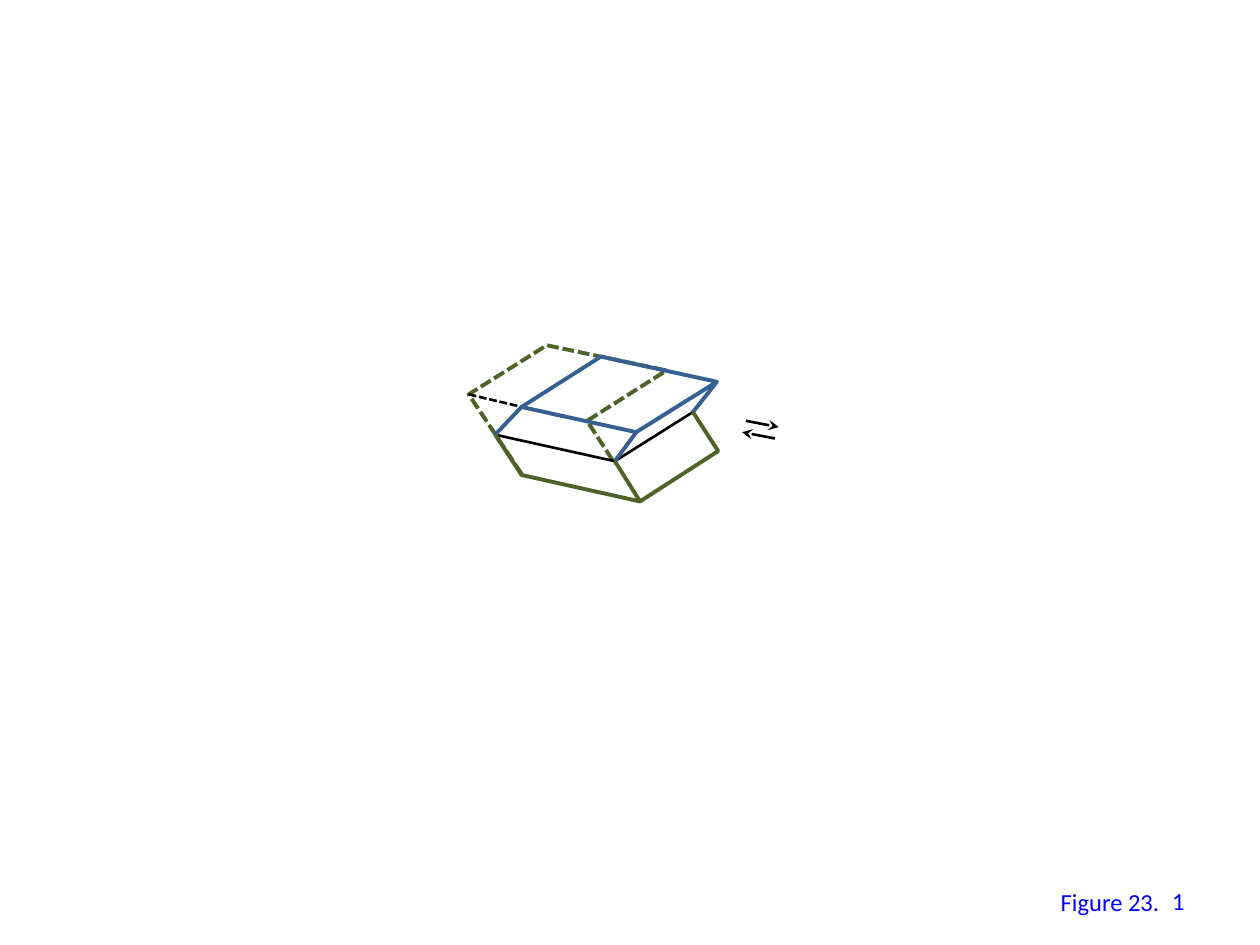
from pptx import Presentation
from pptx.dml.color import RGBColor
from pptx.enum.dml import MSO_LINE
from pptx.enum.shapes import MSO_CONNECTOR
from pptx.enum.text import MSO_ANCHOR, MSO_AUTO_SIZE, PP_ALIGN
from pptx.oxml.ns import qn
from pptx.util import Inches, Pt
from lxml.etree import SubElement

BLACK = RGBColor(0x00, 0x00, 0x00)
GREEN = RGBColor(0x4F, 0x62, 0x28)
BLUE = RGBColor(0x37, 0x60, 0x92)
LABEL_BLUE = RGBColor(0x00, 0x00, 0xFF)
THIN, THICK = 1.5, 2.25

# Corners of the two stacked prisms
MID_LEFT, MID_FRONT, MID_RIGHT = (3.93, 3.45), (4.88, 3.66), (5.5, 3.27)
TOP_LEFT, TOP_BACK, TOP_RIGHT, TOP_FRONT = (4.14, 3.23), (4.77, 2.83), (5.69, 3.03), (5.05, 3.43)
BASE_LEFT, BASE_FRONT, BASE_RIGHT = (4.14, 3.77), (5.08, 3.98), (5.7, 3.58)
GHOST_LEFT, GHOST_BACK, GHOST_RIGHT, GHOST_FRONT = (3.72, 3.13), (4.34, 2.74), (5.29, 2.94), (4.66, 3.34)


class Sketch:
    """Draws outlines and labels on one slide in a shared style."""

    font = "Calibri"
    size = Pt(14)

    def __init__(self, slide):
        self.shapes = slide.shapes

    def style_line(self, line, color, width, dashed):
        line.color.rgb = color
        line.width = Pt(width)
        if dashed:
            line.dash_style = MSO_LINE.SQUARE_DOT

    def line(self, start, end, color, width, dashed=False, arrow=False):
        ends = [Inches(v) for v in (*start, *end)]
        cxn = self.shapes.add_connector(MSO_CONNECTOR.STRAIGHT, *ends)
        self.style_line(cxn.line, color, width, dashed)
        if arrow:
            SubElement(cxn.line._get_or_add_ln(), qn("a:tailEnd"), type="stealth")
        SubElement(cxn._element.spPr, qn("a:effectLst"))

    def outline(self, points, color, width, dashed=False):
        """Draw an open, unfilled polyline."""
        first, *rest = [(Inches(x), Inches(y)) for x, y in points]
        builder = self.shapes.build_freeform(*first)
        builder.add_line_segments(rest, close=False)
        sp = builder.convert_to_shape()
        sp.fill.background()
        sp.shadow.inherit = False
        self.style_line(sp.line, color, width, dashed)

    def label(self, text, left, top, width, height, align=PP_ALIGN.LEFT,
              anchor=MSO_ANCHOR.TOP, wrap=True):
        box = self.shapes.add_textbox(Inches(left), Inches(top), Inches(width), Inches(height))
        tf = box.text_frame
        tf.word_wrap = wrap
        tf.vertical_anchor = anchor
        if not wrap:
            tf.auto_size = MSO_AUTO_SIZE.SHAPE_TO_FIT_TEXT
        p = tf.paragraphs[0]
        p.text = text
        p.alignment = align
        p.font.name = self.font
        p.font.size = self.size
        p.font.color.rgb = LABEL_BLUE


def main():
    prs = Presentation()
    prs.slide_width, prs.slide_height = Inches(10), Inches(7.5)
    s = Sketch(prs.slides.add_slide(prs.slide_layouts[6]))

    s.label("Figure 23.", 8.32, 6.99, 0.99, 0.34, wrap=False)

    s.line((5.92, 3.34), (6.18, 3.39), BLACK, THIN, arrow=True)
    s.line((6.15, 3.48), (5.89, 3.43), BLACK, THIN, arrow=True)

    s.outline([(4.14, 3.76), GHOST_LEFT, GHOST_BACK, GHOST_RIGHT, GHOST_FRONT, (4.88, 3.68)],
              GREEN, THICK, dashed=True)
    s.line(GHOST_LEFT, (4.48, 3.31), BLACK, THIN, dashed=True)

    s.outline([MID_LEFT, MID_FRONT, MID_RIGHT], BLACK, THIN)

    s.outline([MID_LEFT, TOP_LEFT, TOP_BACK, TOP_RIGHT, TOP_FRONT, TOP_LEFT], BLUE, THICK)
    s.line(TOP_FRONT, MID_FRONT, BLUE, THICK)
    s.line(TOP_RIGHT, MID_RIGHT, BLUE, THICK)

    s.outline([MID_LEFT, BASE_LEFT, BASE_FRONT, BASE_RIGHT, MID_RIGHT], GREEN, THICK)
    s.line(MID_FRONT, BASE_FRONT, GREEN, THICK)

    s.label("1", 7.17, 6.95, 2.33, 0.4, PP_ALIGN.RIGHT, MSO_ANCHOR.MIDDLE)

    prs.save("out.pptx")


if __name__ == "__main__":
    main()
